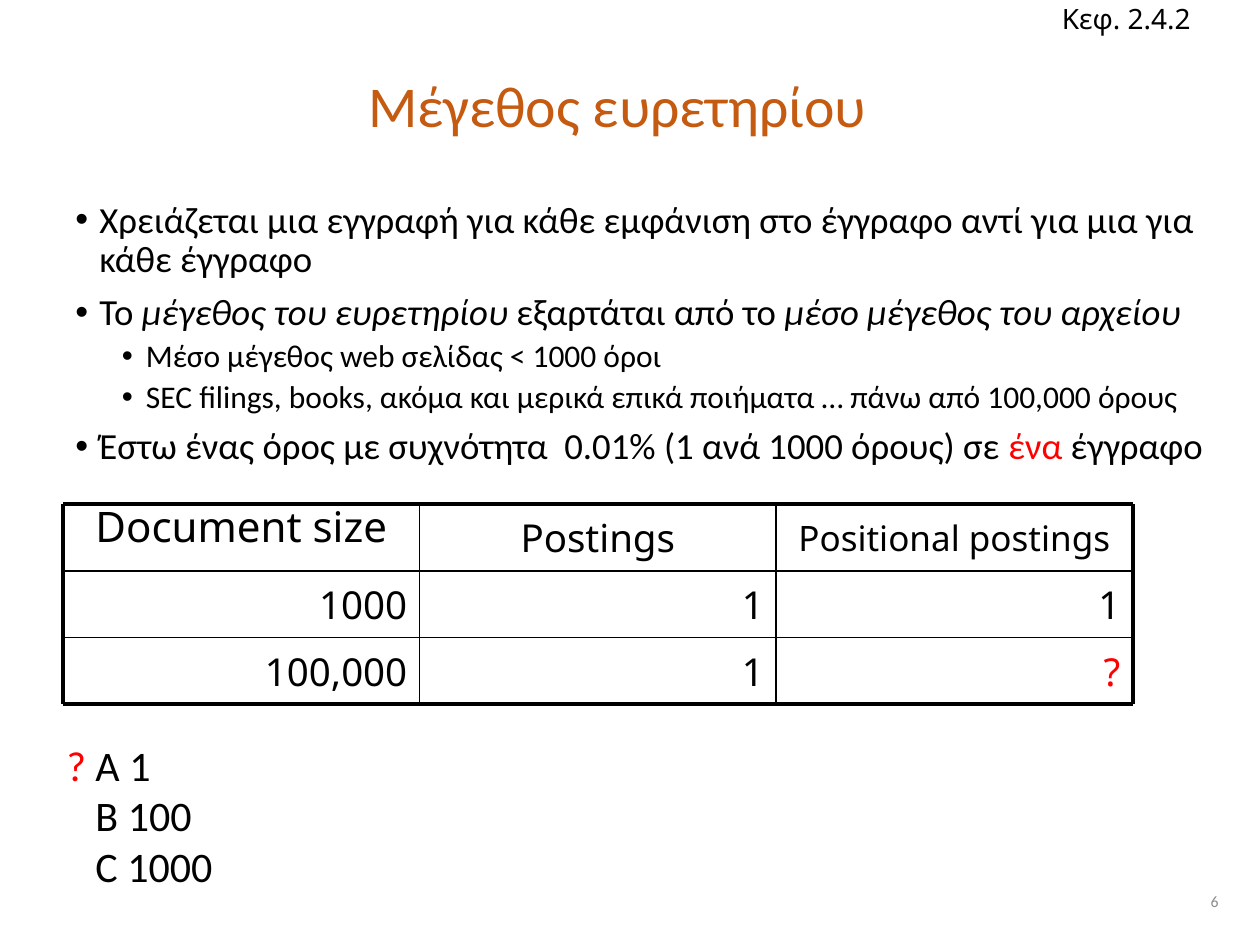
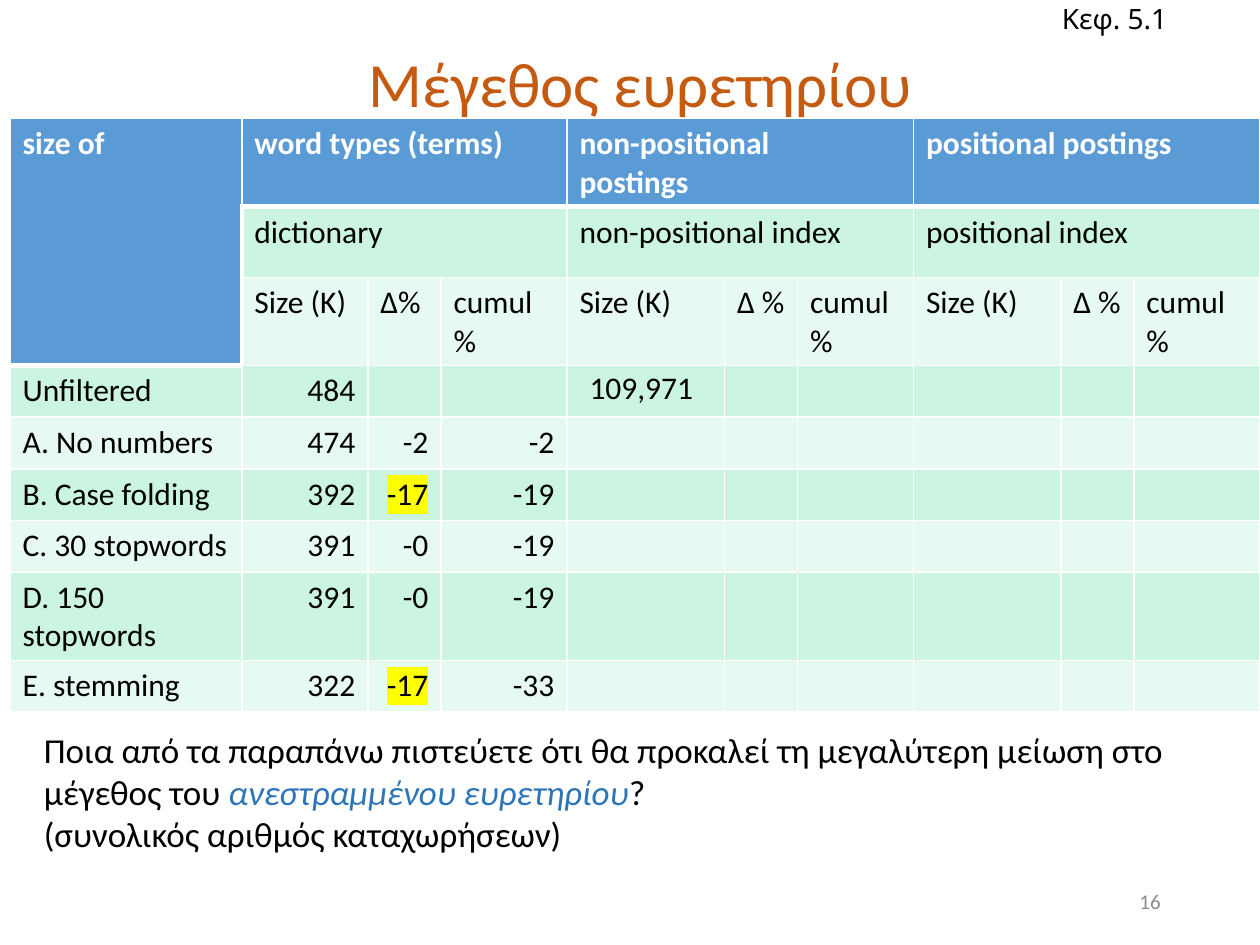
from lxml.etree import SubElement
from pptx import Presentation
from pptx.dml.color import RGBColor
from pptx.enum.shapes import MSO_CONNECTOR
from pptx.enum.text import MSO_ANCHOR, PP_ALIGN
from pptx.oxml import parse_xml
from pptx.oxml.ns import nsdecls, qn
from pptx.util import Inches, Pt

BLACK = RGBColor(0x00, 0x00, 0x00)
WHITE = RGBColor(0xFF, 0xFF, 0xFF)
RED = RGBColor(0xFF, 0x00, 0x00)
ORANGE = RGBColor(0xC5, 0x5A, 0x11)
BLUE = RGBColor(0x2E, 0x75, 0xB6)
GREY = RGBColor(0x8C, 0x8C, 0x8C)
YELLOW = RGBColor(0xFF, 0xFF, 0x00)
HEADER_BLUE = RGBColor(0x5B, 0x9B, 0xD5)
MINT = RGBColor(0xCB, 0xF5, 0xE1)
PALE_MINT = RGBColor(0xE7, 0xFA, 0xF1)

BODY_FONT = "Calibri"
LABEL_FONT = "Noto Sans"
TITLE = "Μέγεθος ευρετηρίου"


# Shared text helpers
def add_span(para, text, size, color=BLACK, font=BODY_FONT, bold=False,
             italic=False, highlight=None):
    span = para.add_run()
    span.text = text
    span.font.size = Pt(size)
    span.font.name = font
    span.font.bold = bold
    span.font.italic = italic
    span.font.color.rgb = color
    if highlight is not None:
        fill = span.font._element.find(qn("a:solidFill"))
        fill.addnext(parse_xml(
            f'<a:highlight {nsdecls("a")}><a:srgbClr val="{highlight}"/></a:highlight>'))


def next_para(frame, index):
    return frame.paragraphs[0] if index == 0 else frame.add_paragraph()


def add_text_box(page, box, anchor=MSO_ANCHOR.TOP, wrap=True):
    frame = page.shapes.add_textbox(*[Inches(length) for length in box]).text_frame
    frame.word_wrap = wrap
    frame.vertical_anchor = anchor
    return frame


def add_line_of_text(page, box, text, size, align, anchor=MSO_ANCHOR.MIDDLE,
                     wrap=True, **style):
    para = add_text_box(page, box, anchor, wrap).paragraphs[0]
    para.alignment = align
    add_span(para, text, size, **style)
    return para


def set_indent(para, left, first=0.0):
    properties = para._p.get_or_add_pPr()
    properties.set("marL", str(Inches(left)))
    properties.set("indent", str(Inches(first)))
    return properties


# Shared page parts
def add_title(page, box, size):
    para = add_line_of_text(page, box, TITLE, size, PP_ALIGN.CENTER, color=ORANGE)
    para.line_spacing = 0.9


def add_chapter(page, text, width):
    add_line_of_text(page, (8.33, -0.04, width, 0.37), text, 16, PP_ALIGN.LEFT,
                     wrap=False, font=LABEL_FONT)


def add_page_number(page, left, number, size):
    add_line_of_text(page, (left, 6.95, 2.25, 0.4), number, size, PP_ALIGN.RIGHT,
                     color=GREY)


# Page 1: bullets, postings grid, answers
def add_bullets(page, box):
    bullets = [
        (0, [("Χρειάζεται μια εγγραφή για κάθε εμφάνιση στο έγγραφο αντί για μια "
              "για κάθε έγγραφο", {})]),
        (0, [("Το ", {}), ("μέγεθος του ευρετηρίου ", {"italic": True}),
             ("εξαρτάται από το ", {}),
             ("μέσο μέγεθος του αρχείου", {"italic": True})]),
        (1, [("Μέσο μέγεθος web σελίδας < 1000 όροι", {})]),
        (1, [("SEC filings, books, ακόμα και μερικά επικά ποιήματα … πάνω από "
              "100,000 όρους", {})]),
        (0, [("Έστω ένας όρος με συχνότητα  0.01% (1 ανά 1000 όρους) σε ", {}),
             ("ένα", {"color": RED}), (" έγγραφο", {})]),
    ]
    levels = [(21, 0.19, 7.5), (18, 0.56, 3.8)]  # size, indent, space before
    frame = add_text_box(page, box)
    for index, (level, spans) in enumerate(bullets):
        size, indent, space = levels[level]
        para = next_para(frame, index)
        para.level = level
        para.line_spacing = 0.9
        para.space_before = Pt(space)
        properties = set_indent(para, indent, -0.19)
        SubElement(properties, qn("a:buFont"), typeface="Arial")
        SubElement(properties, qn("a:buChar"), char="•")
        for text, style in spans:
            add_span(para, text, size, **style)


def add_rule(page, start, end, width):
    ends = [Inches(length) for length in (*start, *end)]
    rule = page.shapes.add_connector(MSO_CONNECTOR.STRAIGHT, *ends)
    rule.line.color.rgb = BLACK
    rule.line.width = Pt(width)
    SubElement(rule._element.spPr, qn("a:effectLst"))


def add_postings_grid(page, left, top):
    rows = [("Document size", "Postings", "Positional postings"),
            ("1000", "1", "1"),
            ("100,000", "1", "?")]
    header_sizes = (24, 22, 20)
    width, height, count = 2.83, 0.53, 3
    for r, row in enumerate(rows):
        for c, text in enumerate(row):
            # The first heading sits a little higher than the others
            lift = 0.09 if (r, c) == (0, 0) else 0
            add_line_of_text(
                page, (left + c * width, top + r * height - lift, width, height),
                text, 22 if r else header_sizes[c],
                PP_ALIGN.RIGHT if r else PP_ALIGN.CENTER,
                color=RED if text == "?" else BLACK, font=LABEL_FONT)

    # Rules: thick outside, thin inside
    right, bottom = left + count * width, top + count * height
    for step in range(count + 1):
        weight = 2.25 if step in (0, count) else 1
        x, y = left + step * width, top + step * height
        add_rule(page, (left, y), (right, y), weight)
        add_rule(page, (x, top), (x, bottom), weight)


def add_answers(page, box):
    frame = add_text_box(page, box)
    for index, answer in enumerate(("Α 1", "Β 100", "C 1000")):
        para = next_para(frame, index)
        if index == 0:
            add_span(para, "? ", 24, color=RED)
        else:
            set_indent(para, 0.23)
        add_span(para, answer, 24)


def build_postings_page(deck):
    page = deck.slides.add_slide(deck.slide_layouts[6])
    add_title(page, (0.59, 0.14, 8.62, 1.45), 33)
    add_bullets(page, (0.5, 1.55, 9.39, 5.35))
    add_page_number(page, 7.52, "6", 9)
    add_postings_grid(page, 0.5, 4)
    add_chapter(page, "Κεφ. 2.4.2", 1.31)
    add_answers(page, (0.43, 5.82, 5.14, 1.31))


# Page 2: compression table and question
def add_plain_table(page, left, top, widths, heights):
    frame = page.shapes.add_table(
        len(heights), len(widths), Inches(left), Inches(top),
        Inches(sum(widths)), Inches(sum(heights)))
    table = frame.table
    table.first_row = table.horz_banding = False
    for column, width in zip(table.columns, widths):
        column.width = Inches(width)
    for row, height in zip(table.rows, heights):
        row.height = Inches(height)
    return table


def set_borders(cell, color, left, right, top, bottom):
    properties = cell._tc.get_or_add_tcPr()
    for side, width in zip("LRTB", (left, right, top, bottom)):
        line = SubElement(properties, qn(f"a:ln{side}"), w=str(Pt(width)))
        fill = SubElement(line, qn("a:solidFill"))
        SubElement(fill, qn("a:srgbClr"), val=str(color))


def style_compression_cell(cell, r, c):
    heading = r == 0 or (c == 0 and r < 3)
    set_borders(cell, WHITE,
                left=3 if c == 1 and r in (1, 2) else 1,
                right=3 if c == 0 and r in (1, 2) else 1,
                top=3 if r == 1 or (r, c) == (3, 0) else 1,
                bottom=3 if r == 0 else 1)
    cell.fill.solid()
    cell.fill.fore_color.rgb = HEADER_BLUE if heading else (MINT if r % 2 else PALE_MINT)


def add_compression_table(page, left, top):
    groups = [("word types (terms)", "dictionary"),
              ("non-positional\npostings", "non-positional index"),
              ("positional postings", "positional index")]
    filters = [("Unfiltered", "484"),
               ("Α. No numbers", "474", "-2", "-2"),
               ("Β. Case folding", "392", "-17", "-19"),
               ("C. 30 stopwords", "391", "-0", "-19"),
               ("D. 150 stopwords", "391", "-0", "-19"),
               ("E. stemming", "322", "-17", "-33")]
    widths = [1.84, 1, 0.58, 1, 1.25, 0.58, 0.92, 1.17, 0.58, 1]
    table = add_plain_table(page, left, top, widths, [0.57, 0.56, 0.43] + [0.41] * 6)
    for r in range(len(table.rows)):
        for c in range(len(widths)):
            style_compression_cell(table.cell(r, c), r, c)

    def write(r, c, text, align=PP_ALIGN.LEFT, **style):
        for index, line in enumerate(text.split("\n")):
            para = next_para(table.cell(r, c).text_frame, index)
            para.alignment = align
            add_span(para, line, 18, **style)

    # Heading rows
    table.cell(0, 0).merge(table.cell(2, 0))
    write(0, 0, "size of", color=WHITE, bold=True)
    for group, (heading, index_name) in enumerate(groups):
        first = 1 + 3 * group
        for r in (0, 1):
            table.cell(r, first).merge(table.cell(r, first + 2))
        write(0, first, heading, color=WHITE, bold=True)
        write(1, first, index_name)
        delta = "∆ %" if group else "∆%"
        for offset, label in enumerate(("Size (K)", delta, "cumul %")):
            write(2, first + offset, label)

    # Filter rows
    for r, (name, *values) in enumerate(filters, 3):
        write(r, 0, name)
        for c, value in enumerate(values, 1):
            write(r, c, value, PP_ALIGN.RIGHT,
                  highlight=YELLOW if value == "-17" else None)


def add_question(page, box):
    frame = add_text_box(page, box)
    para = frame.paragraphs[0]
    add_span(para, "Ποια από τα παραπάνω πιστεύετε ότι θα προκαλεί τη μεγαλύτερη "
                   "μείωση στο μέγεθος του ", 20)
    add_span(para, "ανεστραμμένου ευρετηρίου", 20, color=BLUE, italic=True)
    add_span(para, "?", 20)
    add_span(frame.add_paragraph(), "(συνολικός αριθμός καταχωρήσεων)", 20)


def build_compression_page(deck):
    page = deck.slides.add_slide(deck.slide_layouts[6])
    add_title(page, (0.5, 0.15, 9.17, 1.08), 36)
    add_compression_table(page, 0.08, 0.94)
    add_page_number(page, 7.06, "16", 12)
    add_chapter(page, "Κεφ. 5.1", 1.1)
    add_question(page, (0.25, 5.73, 9.33, 1.11))
    # Posting count laid over the table
    add_line_of_text(page, (4.57, 2.87, 1.03, 0.4), "109,971", 18, PP_ALIGN.RIGHT,
                     anchor=MSO_ANCHOR.TOP, wrap=False)


def main():
    deck = Presentation()
    deck.slide_width = Inches(10)
    deck.slide_height = Inches(7.5)
    build_postings_page(deck)
    build_compression_page(deck)
    deck.save("out.pptx")


if __name__ == "__main__":
    main()
